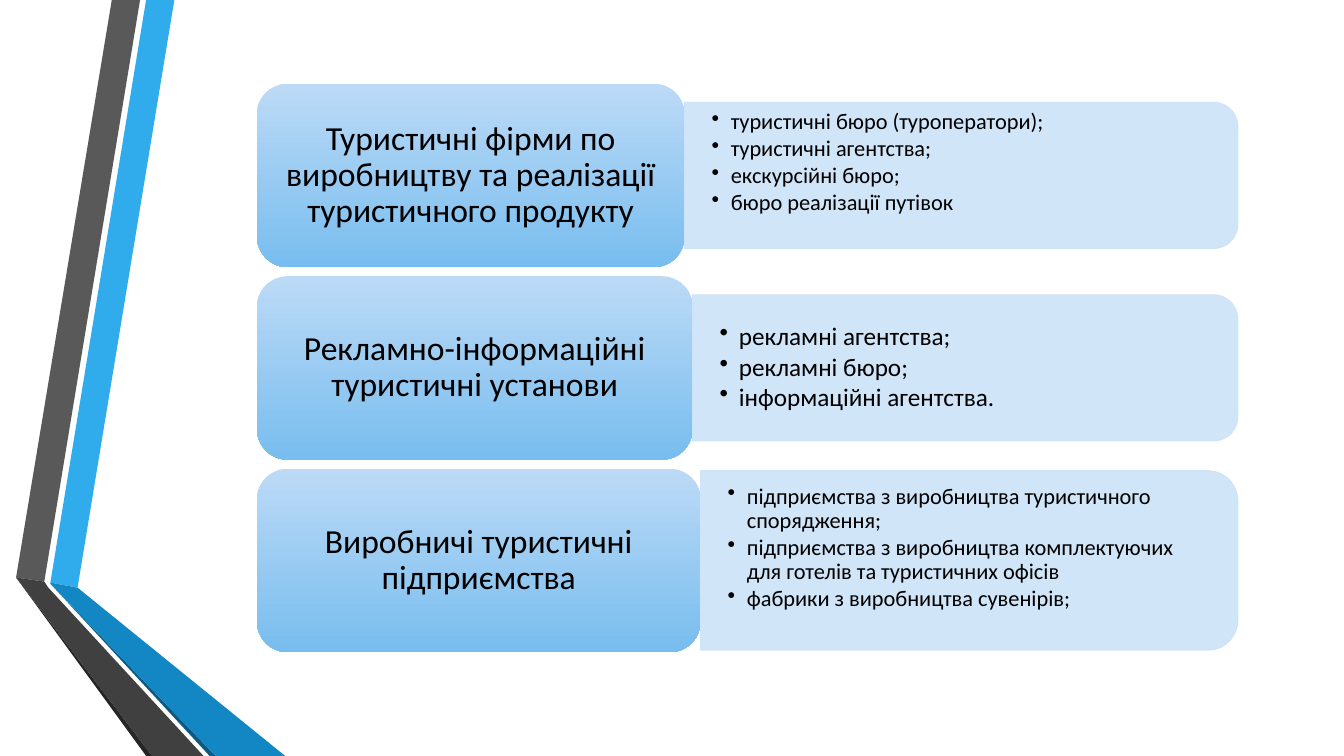
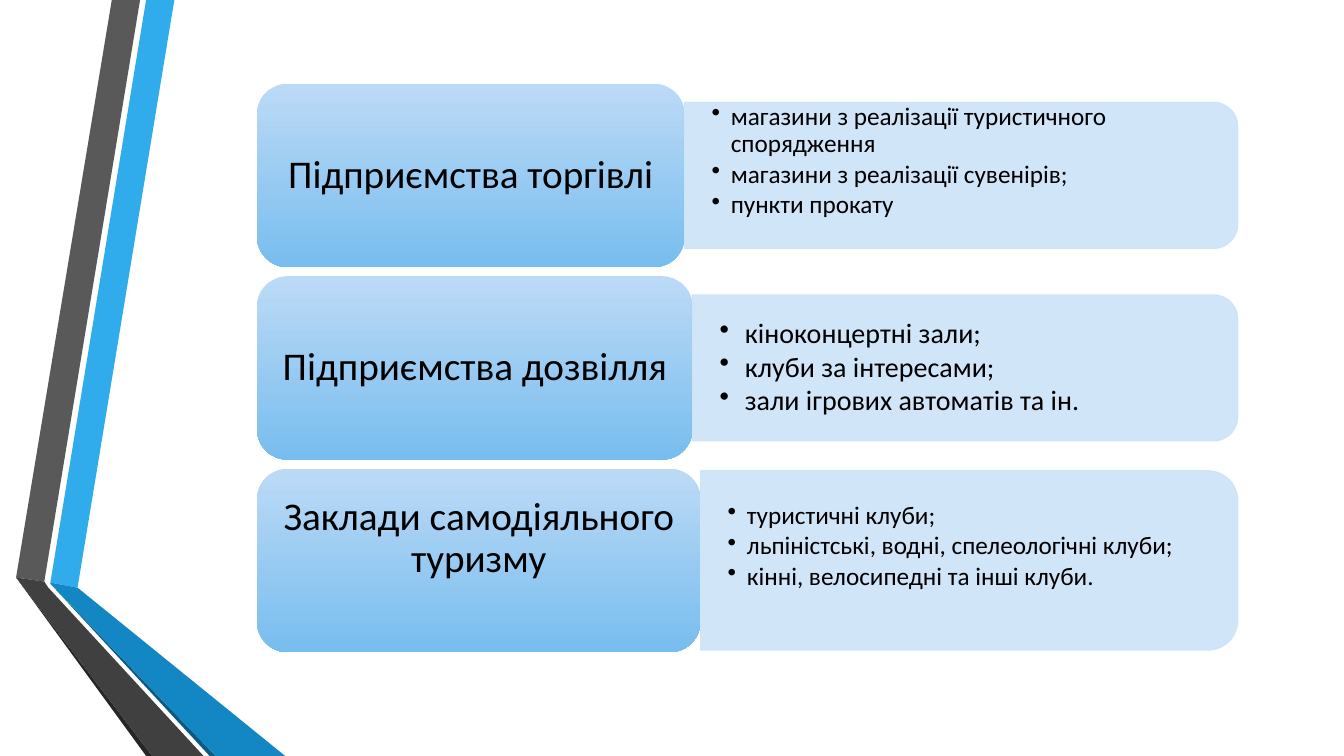
from lxml.etree import SubElement
from pptx import Presentation
from pptx.dml.color import RGBColor
from pptx.enum.shapes import MSO_SHAPE as SHAPE
from pptx.enum.text import MSO_ANCHOR as ANCHOR, PP_ALIGN as ALIGN
from pptx.oxml.ns import qn
from pptx.util import Emu, Inches, Pt

FONT, INK = "Calibri", "000000"
PANEL, HEAD_TOP, HEAD_BOTTOM = "CDE3F8", "BCDAF6", "78BDEF"

# Each row: heading, heading raised by half a line, bullets, bullet size, bullets raised
SLIDES = [
    {"head_size": 24, "rows": [
        ("Туристичні фірми по виробництву та реалізації туристичного продукту", False,
         ["туристичні бюро (туроператори);", "туристичні агентства;",
          "екскурсійні бюро;", "бюро реалізації путівок"], 16, True),
        ("Рекламно-інформаційні туристичні установи", False,
         ["рекламні агентства;", "рекламні бюро;", "інформаційні агентства."], 18, False),
        ("Виробничі туристичні підприємства", False,
         ["підприємства з виробництва туристичного спорядження;",
          "підприємства з виробництва комплектуючих для готелів та туристичних офісів",
          "фабрики з виробництва сувенірів;"], 16, True),
    ]},
    {"head_size": 28, "rows": [
        ("Підприємства торгівлі", False,
         ["магазини з реалізації туристичного спорядження",
          "магазини з реалізації сувенірів;", "пункти прокату"], 18, True),
        ("Підприємства дозвілля", False,
         ["кіноконцертні зали;", "клуби за інтересами;",
          "зали ігрових автоматів та ін."], 20, False),
        ("Заклади самодіяльного туризму", True,
         ["туристичні клуби;", "льпіністські, водні, спелеологічні клуби;",
          "кінні, велосипедні та інші клуби."], 18, True),
    ]},
]

RIBBONS = [
    ("30ACEC", [(0.5, 5.78), (0.77, 5.83), (1.73, 0), (1.45, 0)]),
    ("595959", [(1.39, 0), (1.11, 0), (0.16, 5.73), (0.44, 5.77)]),
    ("262626", [(0.16, 5.73), (1.45, 7.5), (1.51, 7.5)]),
    ("0C5A82", [(0.5, 5.79), (2.08, 7.5), (2.14, 7.5)]),
    ("1287C3", [(0.5, 5.79), (2.14, 7.5), (2.83, 7.5), (0.77, 5.83), (0.5, 5.78)]),
    ("404040", [(2.02, 7.5), (0.48, 5.83), (0.44, 5.77), (0.16, 5.73), (1.51, 7.5)]),
]

LEFT, RIGHT, TOP = 2.55, 12.28, 0.83
ROW_H, ROW_STEP = 1.82, 1.91
HEAD_W, HEAD_GROWTH = 4.24, 0.08
PANEL_HEIGHTS = (1.45, 1.45, 1.78)


def rgb(code):
    return RGBColor.from_string(code)


def inches(*values):
    return [Inches(v) for v in values]


def add_ribbons(prs, s):
    """Draw the ribbons, then move them to the master so that every slide shows them."""
    group = s.shapes.add_group_shape()
    for color, (start, *rest) in RIBBONS:
        builder = group.shapes.build_freeform(*inches(*start), scale=1.0)
        builder.add_line_segments([inches(*point) for point in rest])
        ribbon = builder.convert_to_shape()
        ribbon.shadow.inherit = False
        ribbon.fill.solid()
        ribbon.fill.fore_color.rgb = rgb(color)
        ribbon.line.fill.background()
    prs.slide_master.shapes.element.insert(2, group.element)


def write(tf, lines, size, pads, raised, align, space, indent=None):
    """Fill a frame; raised text sits half a line above the middle."""
    side, edge = pads
    lift = size * 1.1 / 72 / 2 if raised else 0
    top = max(0, edge - lift)
    bottom = top + 2 * lift if raised else edge
    frame = {"word_wrap": True, "vertical_anchor": ANCHOR.MIDDLE,
             "margin_left": Inches(side), "margin_right": Inches(side),
             "margin_top": Inches(top), "margin_bottom": Inches(bottom)}
    for name, value in frame.items():
        setattr(tf, name, value)
    for i, line in enumerate(lines):
        p = tf.paragraphs[0] if i == 0 else tf.add_paragraph()
        p.alignment, p.line_spacing, p.space_after = align, 0.9, Pt(size * space)
        if indent:
            pPr = p._p.get_or_add_pPr()
            pPr.set("marL", str(Inches(indent)))
            pPr.set("indent", str(-Inches(indent)))
            SubElement(pPr, qn("a:buChar")).set("char", "•")
        r = p.add_run()
        r.text = line
        for name, value in {"name": FONT, "size": Pt(size)}.items():
            setattr(r.font, name, value)
        r.font.color.rgb = rgb(INK)


def add_panel(s, x, middle, height):
    width = RIGHT - x
    sp = s.shapes.add_shape(SHAPE.ROUND_2_SAME_RECTANGLE, *inches(
        x + (width - height) / 2, middle - width / 2, height, width))
    sp.rotation = 90
    sp.shadow.inherit = False
    sp.fill.solid()
    sp.fill.fore_color.rgb = sp.line.color.rgb = rgb(PANEL)
    sp.line.width = Pt(0.75)
    for color in list(sp.element.iter(qn("a:srgbClr"))):
        SubElement(color, qn("a:alpha")).set("val", "90000")


def add_head(s, y, width):
    sp = s.shapes.add_shape(SHAPE.ROUNDED_RECTANGLE, *inches(LEFT, y, width, ROW_H))
    sp.shadow.inherit = False
    sp.fill.gradient()
    sp.fill.gradient_angle = 270
    for stop, color in zip(sp.fill.gradient_stops, (HEAD_TOP, HEAD_BOTTOM)):
        stop.color.rgb = rgb(color)
    sp.line.fill.background()
    return sp


def add_rows(s, rows, head_size):
    for i, (head, head_raised, items, size, raised) in enumerate(rows):
        y = TOP + i * ROW_STEP
        width, height = HEAD_W + i * HEAD_GROWTH, PANEL_HEIGHTS[i]
        x, middle = LEFT + width, y + ROW_H / 2
        add_panel(s, x, middle, height)
        box = s.shapes.add_textbox(*inches(
            x, middle - 0.45 * height, RIGHT - x - 0.05 * height, 0.9 * height))
        write(box.text_frame, items, size, (0.27, 0.14), raised, ALIGN.LEFT, 0.13,
              indent=0.25 if size >= 20 else 0.19)
        write(add_head(s, y, width).text_frame, [head], head_size,
              (head_size / 240, head_size / 480), head_raised, ALIGN.CENTER, 0.35)


def main():
    prs = Presentation()
    prs.slide_width, prs.slide_height = Emu(12192000), Inches(7.5)
    blank = prs.slide_layouts[6]
    for i, content in enumerate(SLIDES):
        s = prs.slides.add_slide(blank)
        if i == 0:
            add_ribbons(prs, s)
        add_rows(s, **content)
    prs.save("out.pptx")


if __name__ == "__main__":
    main()
